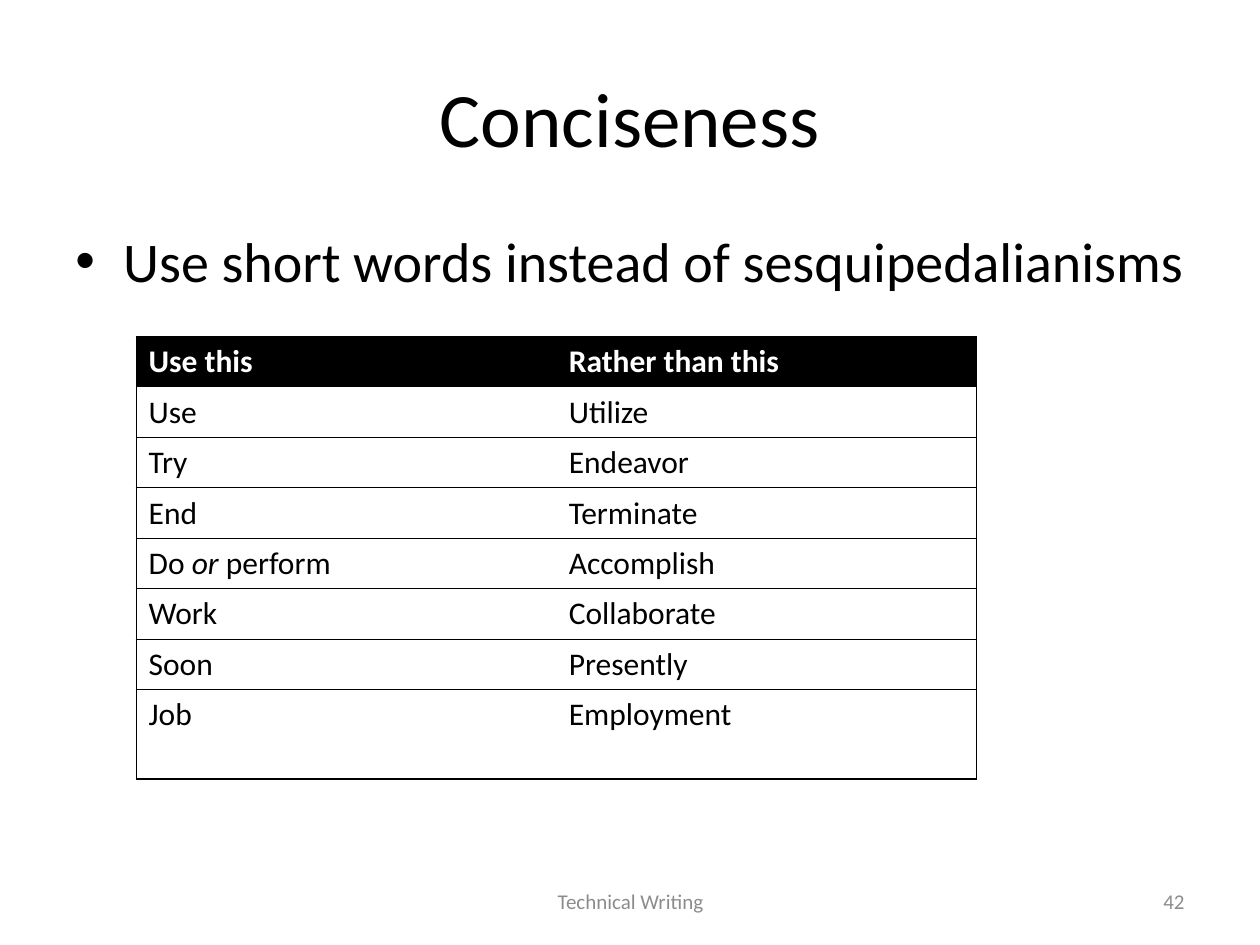
from lxml import etree
from pptx import Presentation
from pptx.dml.color import RGBColor
from pptx.enum.text import MSO_ANCHOR, PP_ALIGN
from pptx.oxml.ns import qn
from pptx.util import Inches, Pt

LEFT, CENTER, RIGHT = PP_ALIGN.LEFT, PP_ALIGN.CENTER, PP_ALIGN.RIGHT
TOP, MIDDLE = MSO_ANCHOR.TOP, MSO_ANCHOR.MIDDLE

WORD_PAIRS = [
    ("Use this", "Rather than this"),
    ("Use", "Utilize"),
    ("Try", "Endeavor"),
    ("End", "Terminate"),
    (("Do ", "or", " perform"), "Accomplish"),
    ("Work", "Collaborate"),
    ("Soon", "Presently"),
    ("Job", "Employment"),
]


def color(hex_code):
    return RGBColor.from_string(hex_code)


class SlideBuilder:
    typeface = "Calibri"
    ink = "000000"
    paper = "FFFFFF"
    muted = "8C8C8C"
    rule_width = Pt(0.75)

    def __init__(self, slide):
        self.slide = slide

    def style(self, paragraph, size, ink, bold=False):
        font = paragraph.font
        font.name, font.size, font.bold = self.typeface, Pt(size), bold
        font.color.rgb = color(ink)

    def text(self, words, box, size, ink=ink, align=LEFT, anchor=MIDDLE):
        frame = self.slide.shapes.add_textbox(*map(Inches, box)).text_frame
        frame.word_wrap = True
        frame.vertical_anchor = anchor
        paragraph = frame.paragraphs[0]
        paragraph.text = words
        paragraph.alignment = align
        self.style(paragraph, size, ink)
        return paragraph

    def bullet(self, words, box, size):
        paragraph = self.text(words, box, size, anchor=TOP)
        paragraph.space_before = Pt(size * 0.2)
        properties = paragraph._p.get_or_add_pPr()
        properties.set("marL", str(Inches(0.38)))
        properties.set("indent", str(-Inches(0.38)))
        marker_font = etree.Element(qn("a:buFont"), typeface="Arial")
        marker = etree.Element(qn("a:buChar"), char="•")
        spacing = properties.find(qn("a:spcBef"))
        spacing.addnext(marker_font)
        marker_font.addnext(marker)

    def borders(self, cell, visible_sides):
        properties = cell._tc.get_or_add_tcPr()
        for position, side in enumerate("LRTB"):
            line = etree.Element(qn(f"a:ln{side}"), w=str(self.rule_width))
            if side in visible_sides:
                fill = etree.SubElement(line, qn("a:solidFill"))
                etree.SubElement(fill, qn("a:srgbClr"), val=self.ink)
            else:
                etree.SubElement(line, qn("a:noFill"))
            properties.insert(position, line)

    def cell(self, cell, content, is_header, outer_side):
        paragraph = cell.text_frame.paragraphs[0]
        if isinstance(content, str):
            paragraph.text = content
        else:
            for index, words in enumerate(content):
                run = paragraph.add_run()
                run.text = words
                run.font.italic = index == 1
        self.style(paragraph, 18, self.paper if is_header else self.ink, is_header)
        cell.fill.solid()
        cell.fill.fore_color.rgb = color(self.ink if is_header else self.paper)
        self.borders(cell, outer_side + "TB")

    def table(self, rows, left, top, width, row_height, last_height):
        height = row_height * (len(rows) - 1) + last_height
        box = map(Inches, (left, top, width, height))
        table = self.slide.shapes.add_table(len(rows), len(rows[0]), *box).table
        table.horz_banding = False
        for row_index, pair in enumerate(rows):
            table.rows[row_index].height = Inches(row_height)
            for column, content in enumerate(pair):
                self.cell(table.cell(row_index, column), content,
                          row_index == 0, "LR"[column])
        table.rows[len(rows) - 1].height = Inches(last_height)


def main():
    deck = Presentation()
    deck.slide_width, deck.slide_height = Inches(10), Inches(7.5)
    builder = SlideBuilder(deck.slides.add_slide(deck.slide_layouts[6]))
    builder.text("Conciseness", (0.5, 0.3, 9, 1.25), 44, align=CENTER)
    builder.bullet("Use short words instead of sesquipedalianisms",
                   (0.5, 1.75, 9, 4.95), 32)
    builder.text("Technical Writing", (3.42, 6.95, 3.17, 0.4), 12,
                 builder.muted, CENTER)
    builder.text("42", (7.17, 6.95, 2.33, 0.4), 12, builder.muted, RIGHT)
    builder.table(WORD_PAIRS, 1.08, 2.67, 6.67, 0.4, 0.71)
    deck.save("out.pptx")


if __name__ == "__main__":
    main()
